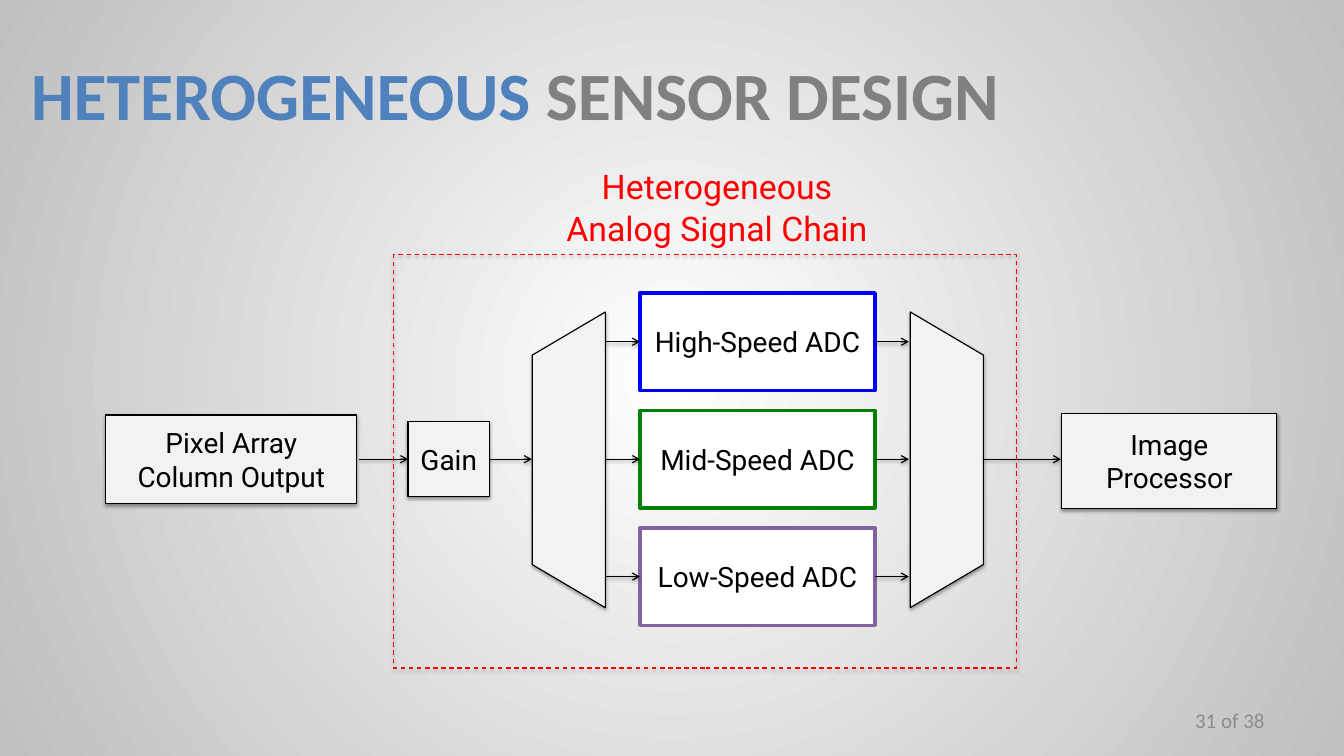
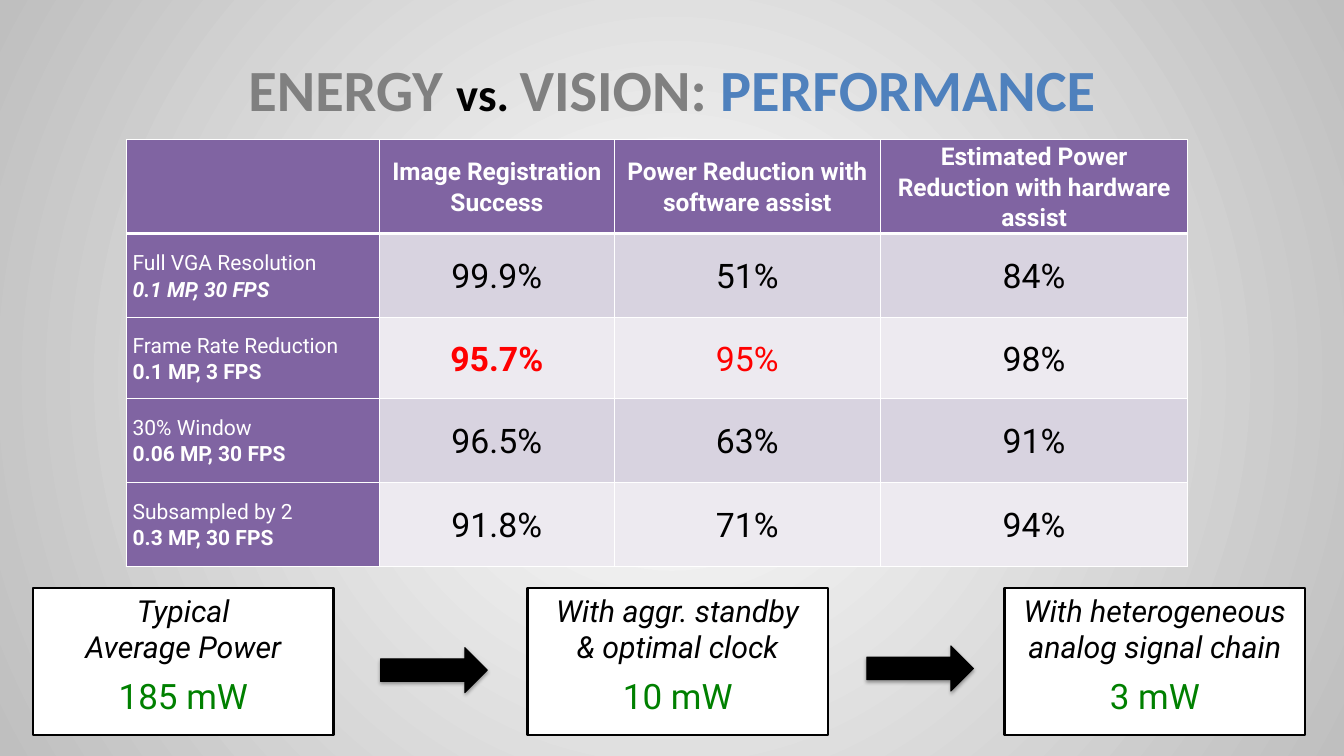
import dataclasses

import lxml.etree
import pptx
import pptx.dml.color
import pptx.enum.dml
import pptx.enum.shapes
import pptx.enum.text
import pptx.oxml.ns
import pptx.util

Cm = pptx.util.Cm
Pt = pptx.util.Pt
SHAPE = pptx.enum.shapes.MSO_SHAPE
ALIGN = pptx.enum.text.PP_ALIGN
ANCHOR = pptx.enum.text.MSO_ANCHOR
qn = pptx.oxml.ns.qn


@dataclasses.dataclass(frozen=True)
class Theme:
    head: str = "Calibri"
    body: str = "Roboto"
    black: str = "000000"
    white: str = "FFFFFF"
    edge: str = "BFBFBF"
    pale: str = "F2F2F2"
    gray: str = "808080"
    page: str = "8C8C8C"
    sky: str = "4F81BD"
    blue: str = "0000FF"
    green: str = "008000"
    violet: str = "8064A2"
    red: str = "FF0000"
    bands: tuple = ("D8D3E0", "EDEAF0")
    title: int = 58
    second: int = 50
    minor: int = 40
    value: int = 29
    power: int = 30
    card: int = 26
    block: int = 24
    column: int = 21
    small: int = 18


T = Theme()

TITLES = [
    ((0.58, 0.91, 36.58, 3.81), ALIGN.LEFT,
     [("HETEROGENEOUS ", T.title, T.sky), ("SENSOR DESIGN", T.title, T.gray)]),
    ((2.03, 0.2, 36.58, 4.95), ALIGN.CENTER,
     [("ENERGY ", T.second, T.gray), ("vs. ", T.minor, T.black),
      ("VISION: ", T.second, T.gray), ("PERFORMANCE", T.second, T.sky)]),
]
PAGE = "31 of 38"
CHAIN = ["Heterogeneous", "Analog Signal Chain"]
BLOCKS = [
    ("Image Processor", (32.11, 12.5, 6.5, 2.87)),
    ("Pixel Array\nColumn Output", (3.2, 12.55, 7.59, 2.67)),
    ("Gain", (12.34, 12.75, 2.46, 2.26)),
]
SPEEDS = [("High-Speed ADC", T.blue), ("Mid-Speed ADC", T.green),
          ("Low-Speed ADC", T.violet)]
FANS = [(18.31, 19.35), (26.46, 27.48)]
LINKS = [(10.87, 12.34), (14.81, 16.08), (29.72, 32.08)]
MUXES = [(12.73, 270), (24.16, 90)]

COLUMNS = ["", "Image Registration Success", "Power Reduction with software assist",
           "Estimated Power Reduction with hardware assist"]
ROWS = [
    ("Full VGA Resolution\n0.1 MP, 30 FPS", "99.9%", "51%", "84%"),
    ("Frame Rate Reduction\n0.1 MP, 3 FPS", "95.7%", "95%", "98%"),
    ("30% Window\n0.06 MP, 30 FPS", "96.5%", "63%", "91%"),
    ("Subsampled by 2\n0.3 MP, 30 FPS", "91.8%", "71%", "94%"),
]
WIDTHS = [7.67, 7.09, 8.05, 9.3]
HEIGHTS = [2.77, 2.54, 2.44, 2.54, 2.54]
CARDS = [
    (1, "Typical\nAverage Power", "185 mW"),
    (15.95, "With aggr. standby\n& optimal clock", "10 mW"),
    (30.38, "With heterogeneous\nanalog signal chain", "3 mW"),
]
ARROWS = [(11.51, 19.58), (26.21, 19.53)]


def color(code):
    return pptx.dml.color.RGBColor.from_string(code)


def node(parent, tag, **items):
    return lxml.etree.SubElement(parent, qn(tag), {k: str(v) for k, v in items.items()})


def place(box):
    return [Cm(n) for n in box]


def style(run, size, code, font=T.body, bold=False, slant=False):
    run.font.size = Pt(size)
    run.font.name = font
    run.font.bold = bold
    run.font.italic = slant
    run.font.color.rgb = color(code)


def write(frame, text, size, code, align=ALIGN.CENTER, **look):
    frame.text = text
    for para in frame.paragraphs:
        para.alignment = align
        for run in para.runs:
            style(run, size, code, **look)


def label(shapes, box, text, size, code, wrap=True, **look):
    frame = shapes.add_textbox(*place(box)).text_frame
    frame.word_wrap = wrap
    write(frame, text, size, code, **look)
    return frame


def pad(frame):
    frame.vertical_anchor = ANCHOR.MIDDLE
    frame.margin_left = frame.margin_right = Cm(0.36)
    frame.margin_top = frame.margin_bottom = Cm(0.18)


def shade(shape, alpha):
    props = shape._element.spPr
    effects = props.find(qn("a:effectLst"))
    if effects is None:
        effects = node(props, "a:effectLst")
    cast = node(effects, "a:outerShdw", blurRad=Pt(3.1), dist=Pt(1.7),
                dir=5400000, rotWithShape=0)
    node(node(cast, "a:srgbClr", val=T.black), "a:alpha", val=alpha * 1000)


def draw(shapes, kind, box, fill, line, width, alpha=0):
    shape = shapes.add_shape(kind, *place(box))
    if fill:
        shape.fill.solid()
        shape.fill.fore_color.rgb = color(fill)
    else:
        shape.fill.background()
    shape.line.color.rgb = color(line)
    shape.line.width = Pt(width)
    shape.shadow.inherit = False
    if alpha:
        shade(shape, alpha)
    return shape


def block(shapes, text, box, fill, line, width, alpha=0):
    frame = draw(shapes, SHAPE.RECTANGLE, box, fill, line, width, alpha).text_frame
    frame.word_wrap = True
    frame.vertical_anchor = ANCHOR.MIDDLE
    write(frame, text, T.block, T.black)


def link(shapes, start, end, y):
    line = shapes.add_connector(pptx.enum.shapes.MSO_CONNECTOR.STRAIGHT,
                                *place((start, y, end, y)))
    line.line.color.rgb = color(T.black)
    line.line.width = Pt(1)
    node(line.line._get_or_add_ln(), "a:tailEnd", type="arrow")
    shade(line, 38)


def title(shapes, box, align, parts):
    frame = shapes.add_textbox(*place(box)).text_frame
    frame.word_wrap = True
    pad(frame)
    para = frame.paragraphs[0]
    para.alignment = align
    for text, size, code in parts:
        run = para.add_run()
        run.text = text
        style(run, size, code, T.head, True)


def backdrop(master):
    master.background.fill.solid()
    props = master.element.find(".//" + qn("p:bgPr"))
    props.remove(props[0])
    grad = node(props, "a:gradFill", rotWithShape=1)
    props.insert(0, grad)
    stops = node(grad, "a:gsLst")
    for spot, code in ((0, T.white), (100000, T.edge)):
        node(node(stops, "a:gs", pos=spot), "a:srgbClr", val=code)
    ring = node(grad, "a:path", path="circle")
    node(ring, "a:fillToRect", l=50000, t=50000, r=50000, b=50000)


def design(shapes):
    for text, box in BLOCKS:
        block(shapes, text, box, T.pale, T.black, 1, 38)
    for left, turn in MUXES:
        mux = draw(shapes, SHAPE.TRAPEZOID, (left, 12.8, 8.94, 2.21),
                   T.pale, T.black, 1, 35)
        mux.adjustments[0] = 0.59
        mux.rotation = turn
    top, tall, step = 8.86, 2.95, 3.55
    for i, (text, code) in enumerate(SPEEDS):
        y = top + i * step
        block(shapes, text, (19.35, y, 7.11, tall), T.white, code, 3)
        for start, end in FANS:
            link(shapes, start, end, y + tall / 2)
    for start, end in LINKS:
        link(shapes, start, end, top + step + tall / 2)
    frame = draw(shapes, SHAPE.RECTANGLE, (11.91, 7.7, 18.82, 12.5), None, T.red, 1, 35)
    frame.line.dash_style = pptx.enum.dml.MSO_LINE.DASH
    for i, text in enumerate(CHAIN):
        label(shapes, (14.27, 4.88 + i * 1.27, 14.83, 1.5), text, T.value, T.red)
    pad(label(shapes, (29.13, 21.18, 9.47, 1.22), PAGE, T.small, T.page,
              align=ALIGN.RIGHT, font=T.head))


def border(cell, row):
    props = cell._tc.get_or_add_tcPr()
    thick = {"T": 3 if row == 1 else 1, "B": 3 if row == 0 else 1}
    for side in "LRTB":
        line = node(props, "a:ln" + side, w=Pt(thick.get(side, 1)))
        node(node(line, "a:solidFill"), "a:srgbClr", val=T.white)


def fill(cell, row, col, text):
    border(cell, row)
    head = row == 0 or col == 0
    cell.fill.solid()
    cell.fill.fore_color.rgb = color(T.violet if head else T.bands[(row - 1) % 2])
    cell.vertical_anchor = ANCHOR.MIDDLE
    cell.margin_left = cell.margin_right = Cm(0.2)
    cell.margin_top = cell.margin_bottom = 0
    frame = cell.text_frame
    if row == 0:
        write(frame, text, T.column, T.white, bold=True)
    elif col == 0:
        write(frame, text, T.small, T.white, ALIGN.LEFT)
        mode = frame.paragraphs[1].runs[0].font
        mode.bold, mode.italic = True, row == 1
    else:
        hot = row == 2 and col < 3
        write(frame, text, T.value, T.red if hot else T.black, bold=hot and col == 1)
    for para in frame.paragraphs:
        para.line_spacing = 1.07


def results(shapes):
    grid = shapes.add_table(len(HEIGHTS), len(WIDTHS), *place(
        (3.81, 4.22, sum(WIDTHS), sum(HEIGHTS)))).table
    grid.horz_banding = False
    for col, wide in zip(grid.columns, WIDTHS):
        col.width = Cm(wide)
    for row, tall in zip(grid.rows, HEIGHTS):
        row.height = Cm(tall)
    for r, texts in enumerate([COLUMNS, *ROWS]):
        for c, text in enumerate(texts):
            fill(grid.cell(r, c), r, c, text)
    for left, text, power in CARDS:
        card = shapes.add_group_shape().shapes
        draw(card, SHAPE.RECTANGLE, (left, 17.78, 9.09, 4.45), T.white, T.black, 2)
        label(card, (left, 20.26, 9.09, 1.55), power, T.power, T.green, False)
        label(card, (left, 17.78, 9.09, 2.49), text, T.card, T.black, False, slant=True)
    for left, top in ARROWS:
        draw(shapes, SHAPE.RIGHT_ARROW, (left, top, 3.23, 1.37),
             T.black, T.black, 0.75, 35)


def main():
    deck = pptx.Presentation()
    deck.slide_width, deck.slide_height = Cm(40.64), Cm(22.86)
    backdrop(deck.slide_master)
    for head, build in zip(TITLES, (design, results)):
        shapes = deck.slides.add_slide(deck.slide_layouts[6]).shapes
        title(shapes, *head)
        build(shapes)
    deck.save("out.pptx")


if __name__ == "__main__":
    main()
